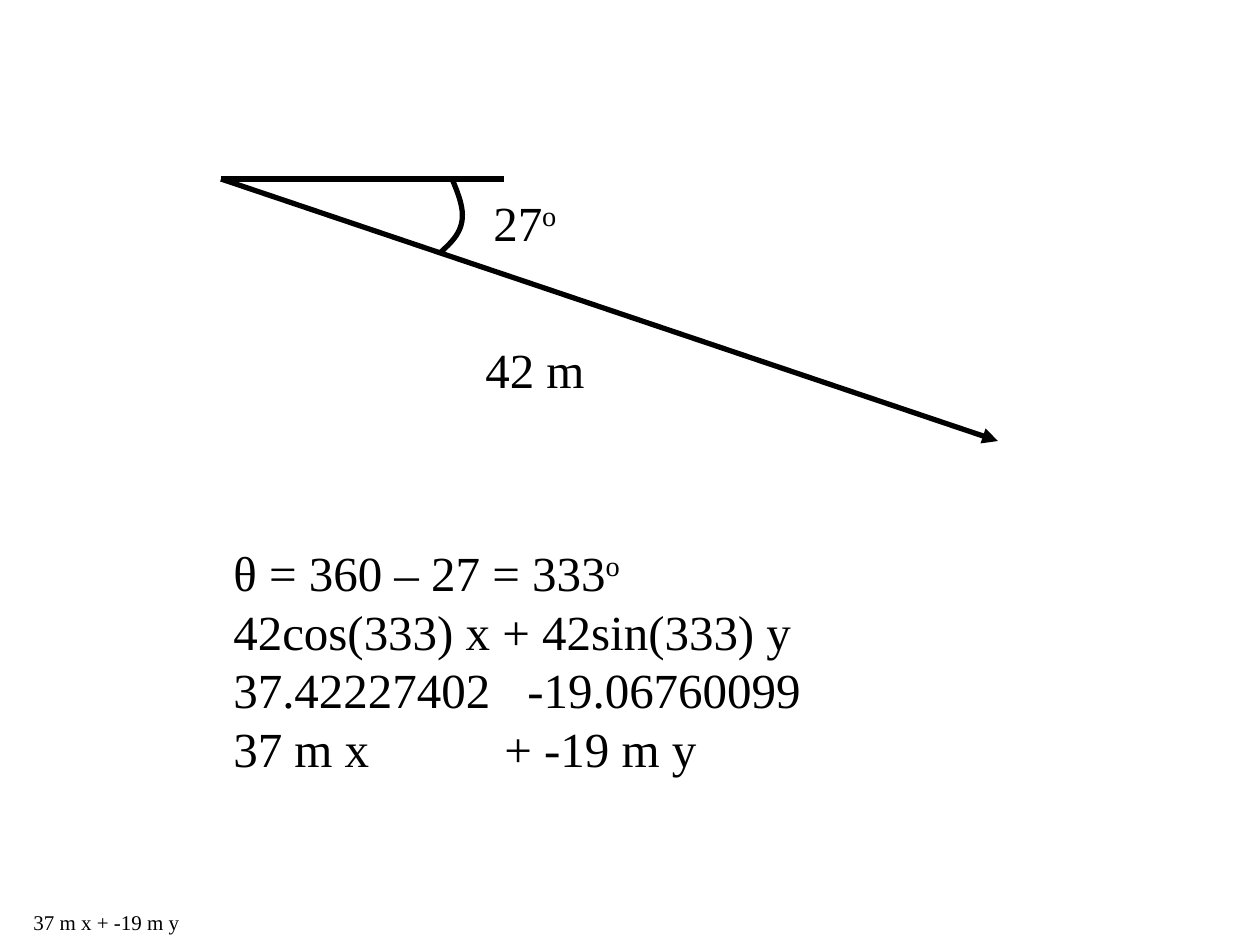
from lxml.etree import SubElement
from pptx import Presentation
from pptx.dml.color import RGBColor
from pptx.enum.shapes import MSO_CONNECTOR
from pptx.enum.text import MSO_AUTO_SIZE
from pptx.oxml.ns import qn
from pptx.util import Pt

PX = 914400 / 126
FONT = "Times New Roman"
COLORS = {"ink": "000000", "page": "FFFFFF"}
STEPS = 12


def emu(px):
    return round(px * PX)


def color(name):
    return RGBColor.from_string(COLORS[name])


def stroke(line):
    line.color.rgb = color("ink")
    line.width = Pt(3)


def add_line(slide, start, end, arrow=False):
    ends = [emu(v) for v in (*start, *end)]
    line = slide.shapes.add_connector(MSO_CONNECTOR.STRAIGHT, *ends)
    stroke(line.line)
    if arrow:
        SubElement(line.line._get_or_add_ln(), qn("a:tailEnd"), type="triangle")
    SubElement(line._element.spPr, qn("a:effectLst"))


def bezier(a, b, c, d):
    for step in range(1, STEPS + 1):
        t = step / STEPS
        u = 1 - t
        yield tuple(
            emu(u**3 * p + 3 * u**2 * t * q + 3 * u * t**2 * r + t**3 * s)
            for p, q, r, s in zip(a, b, c, d)
        )


def add_arc(slide, start, curves):
    pen = slide.shapes.build_freeform(emu(start[0]), emu(start[1]))
    for curve in curves:
        pen.add_line_segments(bezier(start, *curve), close=False)
        start = curve[-1]
    arc = pen.convert_to_shape()
    arc.shadow.inherit = False
    arc.fill.background()
    stroke(arc.line)


def add_text(slide, box, size, rows):
    frame = slide.shapes.add_textbox(*map(emu, box)).text_frame
    frame.word_wrap = False
    frame.auto_size = MSO_AUTO_SIZE.SHAPE_TO_FIT_TEXT
    for index, (parts, tab) in enumerate(rows):
        para = frame.add_paragraph() if index else frame.paragraphs[0]
        if tab:
            tabs = SubElement(para._p.get_or_add_pPr(), qn("a:tabLst"))
            SubElement(tabs, qn("a:tab"), pos=str(emu(tab)), algn="l")
        for spot, part in enumerate(parts):
            run = para.add_run()
            run.text = part
            run.font.name = FONT
            run.font.size = Pt(size)
            run.font.color.rgb = color("ink")
            if spot:
                run._r.get_or_add_rPr().set("baseline", "30000")


def add_sketch(slide, left, top):
    def at(x, y):
        return left + x, top + y

    add_line(slide, at(0, 0), at(283, 0))
    add_line(slide, at(0, 0), at(777, 262), arrow=True)
    add_arc(slide, at(231, 0), [
        (at(237, 14), at(243, 29), at(241, 42)),
        (at(239, 55), at(230, 64), at(220, 73)),
    ])
    add_text(slide, (*at(252, 154), 125, 72), 28, [(["42 m"], 0)])
    add_text(slide, (*at(260, 7), 91, 72), 28, [(["27", "o"], 0)])


def add_work(slide, left, top):
    add_text(slide, (left, top, 593, 248), 28, [
        (["θ = 360 – 27 = 333", "o"], 0),
        (["42cos(333) x + 42sin(333) y"], 0),
        (["37.42227402\t-19.06760099"], 294),
        (["37 m x\t+ -19 m y"], 271),
    ])


def add_answer(slide, left, top):
    add_text(slide, (left, top, 171, 38), 12, [(["37 m x + -19 m y"], 0)])


def main():
    deck = Presentation()
    deck.slide_width, deck.slide_height = emu(1260), emu(945)
    slide = deck.slides.add_slide(deck.slide_layouts[6])
    slide.background.fill.solid()
    slide.background.fill.fore_color.rgb = color("page")
    add_answer(slide, 21, 903)
    add_sketch(slide, 221, 179)
    add_work(slide, 221, 536)
    deck.save("out.pptx")


if __name__ == "__main__":
    main()
